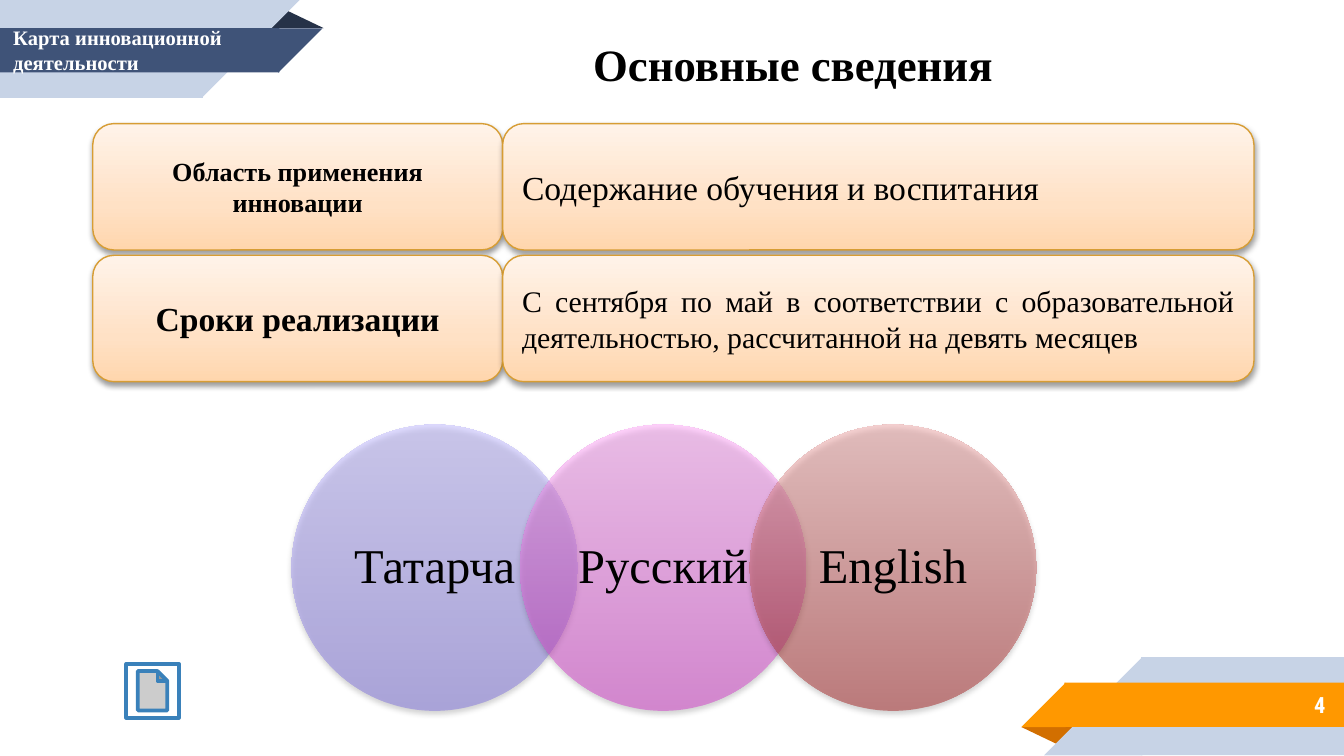
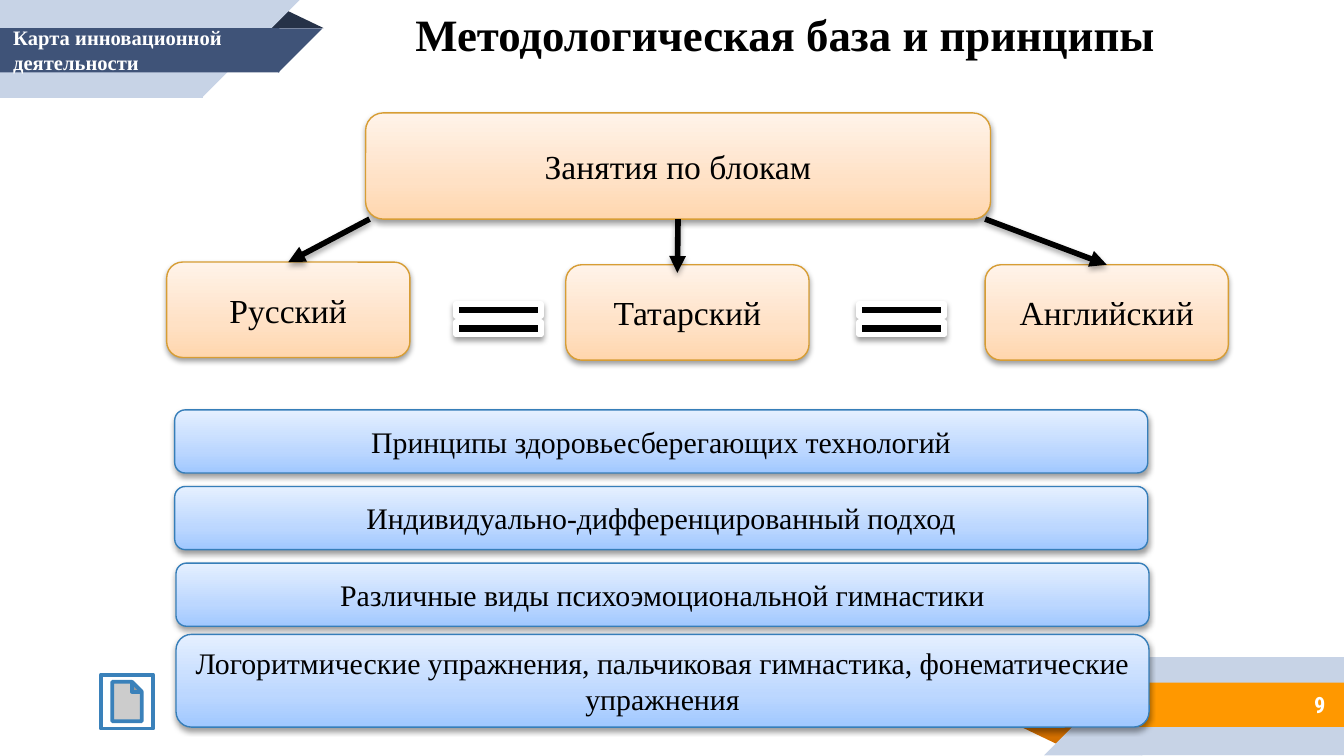
"""Builds two slides about a trilingual teaching project."""
from lxml.etree import SubElement
from pptx import Presentation
from pptx.dml.color import RGBColor
from pptx.enum.shapes import MSO_CONNECTOR, MSO_SHAPE
from pptx.enum.text import MSO_ANCHOR, PP_ALIGN
from pptx.oxml.ns import qn
from pptx.util import Inches, Pt

COLORS = {
    "black": "000000", "white": "FFFFFF", "pale": "C7D3E6",
    "navy": "3F5378", "dark navy": "263248",
    "orange": "FF9800", "dark orange": "D26F00",
    "icon": "3A81BA", "peach line": "D79D34", "blue line": "367EB9",
}
PEACH = [(0, "FFD6AD"), (35, "FFE1C5"), (100, "FFF3E9")]
BLUE = [(0, "A0C8FF"), (35, "BCD7FF"), (100, "E5F0FF")]
SERIF = "Times New Roman"
BOX_SHADOW = (38, 1.6)
SOFT_SHADOW = (35, 1.8)


def write_text(shape, text, size=18, bold=False, color="black", font=SERIF,
               align=PP_ALIGN.CENTER, anchor=MSO_ANCHOR.MIDDLE,
               insets=(0.1, 0.05), spacing=None):
    """Fill a shape with one paragraph for each line of text."""
    frame = shape.text_frame
    frame.word_wrap = True
    frame.vertical_anchor = anchor
    frame.margin_left = frame.margin_right = Inches(insets[0])
    frame.margin_top = frame.margin_bottom = Inches(insets[1])
    frame.text = text
    for para in frame.paragraphs:
        para.alignment = align
        para.line_spacing = spacing
        for span in para.runs:
            span.font.size = Pt(size)
            span.font.bold = bold
            span.font.name = font
            span.font.color.rgb = RGBColor.from_string(COLORS[color])


def style_shape(shape, fill=None, stops=None, opacity=100, line=None, width=0.75,
                shadow=None):
    """Set the fill, line and shadow of a shape or connector."""
    properties = shape.element.spPr
    if fill:
        shape.fill.solid()
        shape.fill.fore_color.rgb = RGBColor.from_string(COLORS[fill])
    if stops:
        shape.fill.gradient()
        shape.fill.gradient_angle = 90
        stop_list = properties.find(qn("a:gradFill")).find(qn("a:gsLst"))
        stop_list.clear()
        for position, value in stops:
            stop = SubElement(stop_list, qn("a:gs"), pos=str(position * 1000))
            color = SubElement(stop, qn("a:srgbClr"), val=value)
            SubElement(color, qn("a:alpha"), val=str(opacity * 1000))
    if line:
        shape.line.color.rgb = RGBColor.from_string(COLORS[line])
        shape.line.width = Pt(width)
    else:
        shape.line.fill.background()
    effects = SubElement(properties, qn("a:effectLst"))
    if shadow:
        strength, distance = shadow
        outer = SubElement(effects, qn("a:outerShdw"), blurRad=str(Pt(3.1)),
                           dist=str(Pt(distance)), dir="5400000", rotWithShape="0")
        color = SubElement(outer, qn("a:srgbClr"), val=COLORS["black"])
        SubElement(color, qn("a:alpha"), val=str(strength * 1000))


deck = Presentation()
deck.slide_width = Inches(10)
deck.slide_height = Inches(10) * 9 // 16
layout = deck.slide_layouts[5]
facts = deck.slides.add_slide(layout)
method = deck.slides.add_slide(layout)

ribbons = [
    (MSO_SHAPE.ISOSCELES_TRIANGLE, (7.6, 5.41, 0.43, 0.14), "dark orange", 180, False),
    (MSO_SHAPE.RECTANGLE, (8.49, 4.89, 1.51, 0.73), "pale", 0, False),
    (MSO_SHAPE.RIGHT_TRIANGLE, (7.77, 4.89, 0.73, 0.73), "pale", 0, True),
    (MSO_SHAPE.RECTANGLE, (7.92, 5.08, 2.08, 0.33), "orange", 0, False),
    (MSO_SHAPE.RIGHT_TRIANGLE, (7.6, 5.08, 0.33, 0.33), "orange", 0, True),
    (MSO_SHAPE.ISOSCELES_TRIANGLE, (1.98, 0.07, 0.43, 0.14), "dark navy", 0, False),
    (MSO_SHAPE.RECTANGLE, (0, 0, 1.51, 0.73), "pale", 0, False),
    (MSO_SHAPE.RIGHT_TRIANGLE, (1.5, 0, 0.73, 0.73), "pale", 180, True),
    (MSO_SHAPE.RECTANGLE, (0, 0.21, 2.08, 0.33), "navy", 0, False),
    (MSO_SHAPE.RIGHT_TRIANGLE, (2.07, 0.21, 0.33, 0.33), "navy", 180, True),
]
for number, (kind, place, color, turn, flipped) in enumerate(ribbons):
    ribbon = facts.shapes.add_shape(kind, *map(Inches, place))
    style_shape(ribbon, fill=color)
    ribbon.rotation = turn
    if kind == MSO_SHAPE.ISOSCELES_TRIANGLE:
        ribbon.adjustments[0] = 0.32
    if flipped:
        ribbon.element.spPr.find(qn("a:xfrm")).set("flipH", "1")
    ribbon.element.find(qn("p:nvSpPr")).find(qn("p:cNvPr")).set("id", str(100 + number))
    layout.shapes.element.append(ribbon.element)

page_heads = [
    (facts, "Основные сведения", (2.4, 0.22), "4", (0.94, 4.94)),
    (method, "Методологическая база и принципы", (2.34, 0), "9", (0.75, 5.02)),
]
for page, heading, corner, number, icon_corner in page_heads:
    title = page.shapes.title
    title.left, title.top = map(Inches, corner)
    title.width, title.height = Inches(7), Inches(0.5)
    write_text(title, heading, size=24, bold=True, anchor=MSO_ANCHOR.TOP)
    page_number = page.shapes.add_textbox(*map(Inches, (8.33, 5.07, 1.63, 0.35)))
    write_text(page_number, number, size=12, bold=True, color="white",
               font="Roboto Condensed", align=PP_ALIGN.RIGHT, insets=(0.1, 0.1))
    icon = page.shapes.add_shape(MSO_SHAPE.ACTION_BUTTON_DOCUMENT,
                                 *map(Inches, (*icon_corner, 0.39, 0.4)))
    style_shape(icon, fill="white", line="icon", width=2)
    label = page.shapes.add_textbox(*map(Inches, (0, 0.14, 3.28, 0.47)))
    write_text(label, "Карта инновационной\nдеятельности", size=11, bold=True,
               color="white", align=PP_ALIGN.LEFT, anchor=MSO_ANCHOR.TOP)

fact_rows = [
    ("Область применения инновации", 14, "Содержание обучения и воспитания", 18),
    ("Сроки реализации", 18, "С сентября по май в соответствии с образовательной "
     "деятельностью, рассчитанной на девять месяцев", 16),
]
for row, (name, name_size, value, value_size) in enumerate(fact_rows):
    cells = [(0.69, 3.05, name, name_size, True, PP_ALIGN.CENTER),
             (3.74, 5.59, value, value_size, False, PP_ALIGN.JUSTIFY)]
    for left, width, text, size, bold, align in cells:
        box = facts.shapes.add_shape(MSO_SHAPE.ROUNDED_RECTANGLE, *map(
            Inches, (left, 0.92 + 0.98 * row, width, 0.94)))
        style_shape(box, stops=PEACH, line="peach line", shadow=BOX_SHADOW)
        write_text(box, text, size=size, bold=bold, align=align)

languages = [
    ("Татарча", 2.17, "8275DE", "BFB8FF"),
    ("Русский", 3.87, "D23CCA", "FFA6F8"),
    ("English", 5.58, "A52425", "EDA5A5"),
]
for language, left, bottom, top in languages:
    circle = facts.shapes.add_shape(MSO_SHAPE.OVAL, *map(Inches, (left, 3.16, 2.13, 2.13)))
    style_shape(circle, stops=[(0, bottom), (100, top)], opacity=50, shadow=SOFT_SHADOW)
    caption = facts.shapes.add_textbox(*map(Inches, (left + 0.31, 3.47, 1.51, 1.51)))
    write_text(caption, language, size=26, insets=(0.12, 0.04), spacing=0.9)

blocks = [
    ("Занятия по блокам", (2.72, 0.84, 4.65, 0.79)),
    ("Русский", (1.24, 1.95, 1.81, 0.71)),
    ("Татарский", (4.21, 1.97, 1.81, 0.71)),
    ("Английский", (7.33, 1.97, 1.81, 0.71)),
]
block_boxes = []
for text, place in blocks:
    box = method.shapes.add_shape(MSO_SHAPE.ROUNDED_RECTANGLE, *map(Inches, place))
    style_shape(box, stops=PEACH, line="peach line", shadow=BOX_SHADOW)
    write_text(box, text)
    block_boxes.append(box)
lessons, russian, tatar, english = block_boxes

arrows = [
    ((2.75, 1.63, 2.14, 1.95), None, russian),
    ((5.04, 1.63, 5.04, 2.03), lessons, None),
    ((7.33, 1.63, 8.24, 1.97), None, english),
]
for ends, source, target in arrows:
    arrow = method.shapes.add_connector(MSO_CONNECTOR.STRAIGHT, *map(Inches, ends))
    if source:
        arrow.begin_connect(source, 2)
    if target:
        arrow.end_connect(target, 0)
    style_shape(arrow, line="black", width=3, shadow=SOFT_SHADOW)
    SubElement(arrow.element.spPr.find(qn("a:ln")), qn("a:tailEnd"), type="triangle")

for left in (3.28, 6.28):
    equal = method.shapes.add_shape(MSO_SHAPE.MATH_EQUAL,
                                    *map(Inches, (left, 2.18, 0.86, 0.39)))
    style_shape(equal, fill="black", line="white", width=3, shadow=BOX_SHADOW)

principles = [
    ("Принципы здоровьесберегающих технологий", 1.3, 3.05, 0.47),
    ("Индивидуально-дифференцированный подход", 1.3, 3.62, 0.47),
    ("Различные виды психоэмоциональной гимнастики", 1.31, 4.19, 0.47),
    ("Логоритмические упражнения, пальчиковая гимнастика, фонематические упражнения",
     1.31, 4.72, 0.69),
]
for text, left, top, height in principles:
    bar = method.shapes.add_shape(MSO_SHAPE.ROUNDED_RECTANGLE,
                                  *map(Inches, (left, top, 7.24, height)))
    style_shape(bar, stops=BLUE, line="blue line", shadow=BOX_SHADOW)
    write_text(bar, text, size=16)

deck.save("out.pptx")
